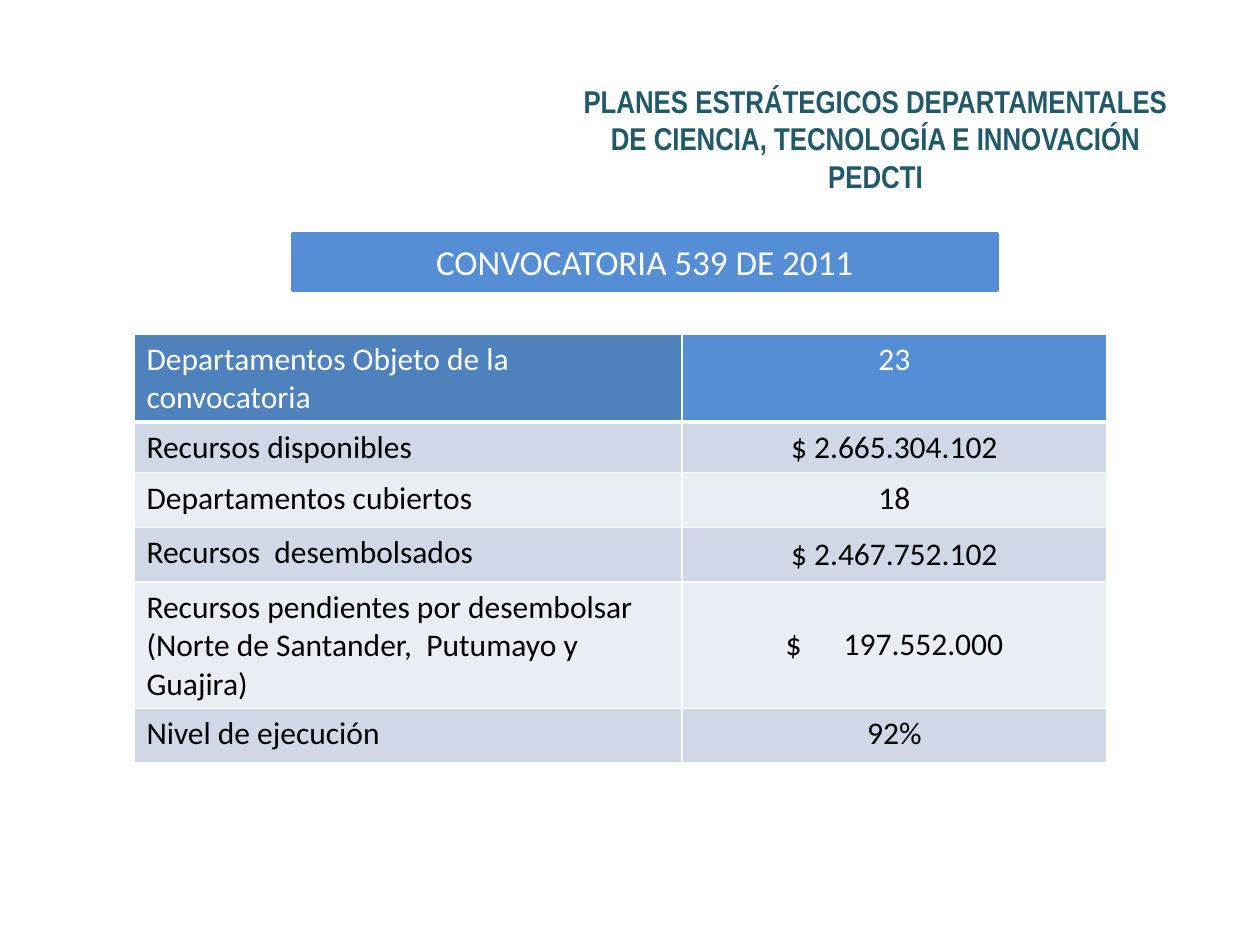
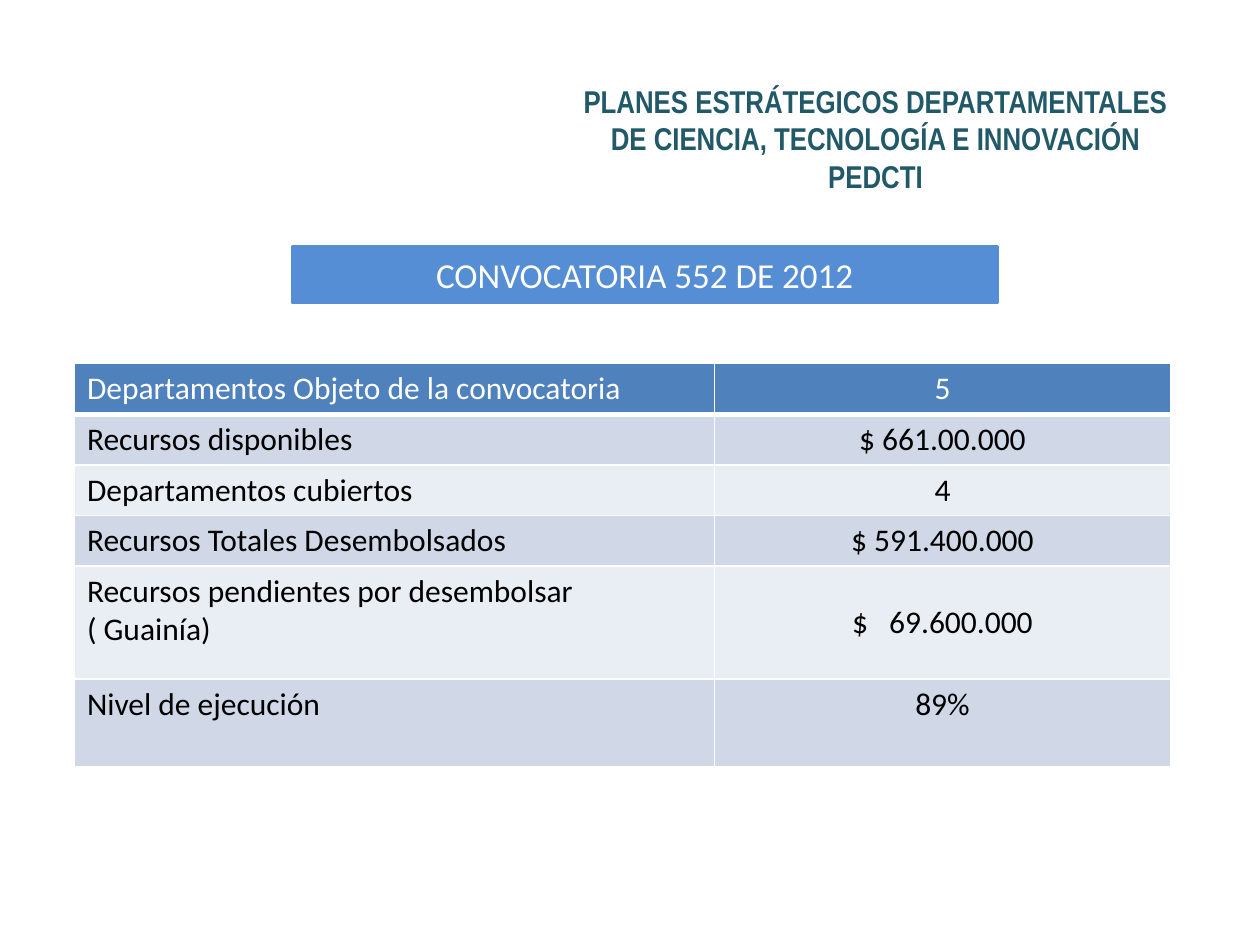
from lxml.etree import SubElement as Sub
from pptx import Presentation as Deck
from pptx.dml.color import RGBColor as Rgb
from pptx.enum.shapes import MSO_SHAPE as Shape
from pptx.enum.text import MSO_ANCHOR as Anchor, PP_ALIGN as Align
from pptx.oxml.ns import qn
from pptx.util import Cm, Pt

HUES = {
    "title": "215968",
    "bar": "558ED5",
    "head": "4F81BD",
    "dark": "D0D8E8",
    "light": "E9EDF4",
    "white": "FFFFFF",
    "black": "000000",
}

FONTS = {
    "title": {"name": "Arial Narrow", "size": Pt(18), "bold": True},
    "bar": {"name": "Calibri", "size": Pt(20), "bold": False},
    "cell": {"name": "Calibri", "size": Pt(18), "bold": False},
}

TITLE = [
    "PLANES ESTRÁTEGICOS DEPARTAMENTALES DE CIENCIA, TECNOLOGÍA E INNOVACIÓN",
    "PEDCTI",
]
BREAK = None  # line break within a cell

# In a row's text, a number is one space widened by that many points.
CALLS = [
    {
        "name": "CONVOCATORIA 539 DE 2011",
        "bar_top": 4.72,
        "spot": (2.7, 6.73),
        "cols": (11.05, 8.56),
        "lines": (1.78, 1.02, 1.1, 1.1, 2.55, 1.1),
        "head": ("head", "bar"),
        "rows": [
            (["Departamentos Objeto de la convocatoria"], ["23"]),
            (["Recursos disponibles"], ["$ 2.665.304.102"]),
            (["Departamentos cubiertos"], ["18"]),
            (["Recursos", 4, "desembolsados"], ["$ 2.467.752.102"]),
            (["Recursos pendientes por desembolsar (Norte de Santander,", 4,
              "Putumayo y Guajira)"], ["$", 20, "197.552.000"]),
            (["Nivel de ejecución"], ["92%"]),
        ],
    },
    {
        "name": "CONVOCATORIA 552 DE 2012",
        "bar_top": 4.98,
        "spot": (1.5, 7.33),
        "cols": (12.9, 9.2),
        "lines": (1.02, 1.02, 1.02, 1.02, 2.28, 1.76),
        "head": ("head", "head"),
        "rows": [
            (["Departamentos Objeto de la convocatoria"], ["5"]),
            (["Recursos disponibles"], ["$ 661.00.000"]),
            (["Departamentos cubiertos"], ["4"]),
            (["Recursos Totales Desembolsados"], ["$ 591.400.000"]),
            (["Recursos pendientes por desembolsar", BREAK, "( Guainía)"],
             ["$", 8, "69.600.000"]),
            (["Nivel de ejecución"], ["89%"]),
        ],
    },
]
MID_ROWS = (3, 4)  # rows whose value is centred in height


def rgb(key):
    return Rgb.from_string(HUES[key])


def style(font, kind, hue):
    for key, val in FONTS[kind].items():
        setattr(font, key, val)
    font.color.rgb = rgb(hue)


def write(para, parts, kind, hue, align=Align.LEFT):
    para.alignment = align
    for part in parts:
        if part is BREAK:
            para.add_line_break()
            continue
        run = para.add_run()
        style(run.font, kind, hue)
        if isinstance(part, str):
            run.text = part
        else:
            run.text = " "
            run.font._element.set("spc", str(part * 100))


def add_title(slide):
    box = slide.shapes.add_textbox(Cm(11.3), Cm(1.52), Cm(12.7), Cm(2.57))
    frame = box.text_frame
    frame.word_wrap = True
    for i, text in enumerate(TITLE):
        para = frame.add_paragraph() if i else frame.paragraphs[0]
        write(para, [text], "title", "title", Align.CENTER)


def add_bar(slide, text, top):
    bar = slide.shapes.add_shape(
        Shape.RECTANGLE, Cm(5.9), Cm(top), Cm(14.2), Cm(1.12))
    bar.shadow.inherit = False
    bar.fill.solid()
    bar.fill.fore_color.rgb = rgb("bar")
    bar.line.color.rgb = rgb("bar")
    bar.line.width = Pt(2.25)
    bar.text_frame.word_wrap = True
    write(bar.text_frame.paragraphs[0], [text], "bar", "white", Align.CENTER)


def edge(cell, base):
    props = cell._tc.get_or_add_tcPr()
    for side, width in {"L": 1, "R": 1, "T": 1, "B": base}.items():
        line = Sub(props, qn(f"a:ln{side}"), w=str(Pt(width)))
        Sub(Sub(line, qn("a:solidFill")), qn("a:srgbClr"), val=HUES["white"])


def add_grid(slide, call):
    rows, cols, lines = call["rows"], call["cols"], call["lines"]
    left, top = call["spot"]
    grid = slide.shapes.add_table(
        len(rows), len(cols), Cm(left), Cm(top),
        Cm(sum(cols)), Cm(sum(lines))).table
    for col, width in zip(grid.columns, cols):
        col.width = Cm(width)
    for r, (row, high) in enumerate(zip(rows, lines)):
        grid.rows[r].height = Cm(high)
        band = "dark" if r % 2 else "light"
        for c, parts in enumerate(row):
            cell = grid.cell(r, c)
            edge(cell, 1 if r else 3)
            cell.fill.solid()
            cell.fill.fore_color.rgb = rgb(band if r else call["head"][c])
            if c and r in MID_ROWS:
                cell.vertical_anchor = Anchor.MIDDLE
                for side in ("left", "right", "top", "bottom"):
                    setattr(cell, f"margin_{side}", 0)
            write(cell.text_frame.paragraphs[0], parts, "cell",
                  "black" if r else "white",
                  Align.CENTER if c else Align.LEFT)


def main():
    deck = Deck()
    deck.slide_width, deck.slide_height = Cm(25.4), Cm(19.05)
    for call in CALLS:
        slide = deck.slides.add_slide(deck.slide_layouts[6])
        add_title(slide)
        add_bar(slide, call["name"], call["bar_top"])
        add_grid(slide, call)
    deck.save("out.pptx")


if __name__ == "__main__":
    main()
